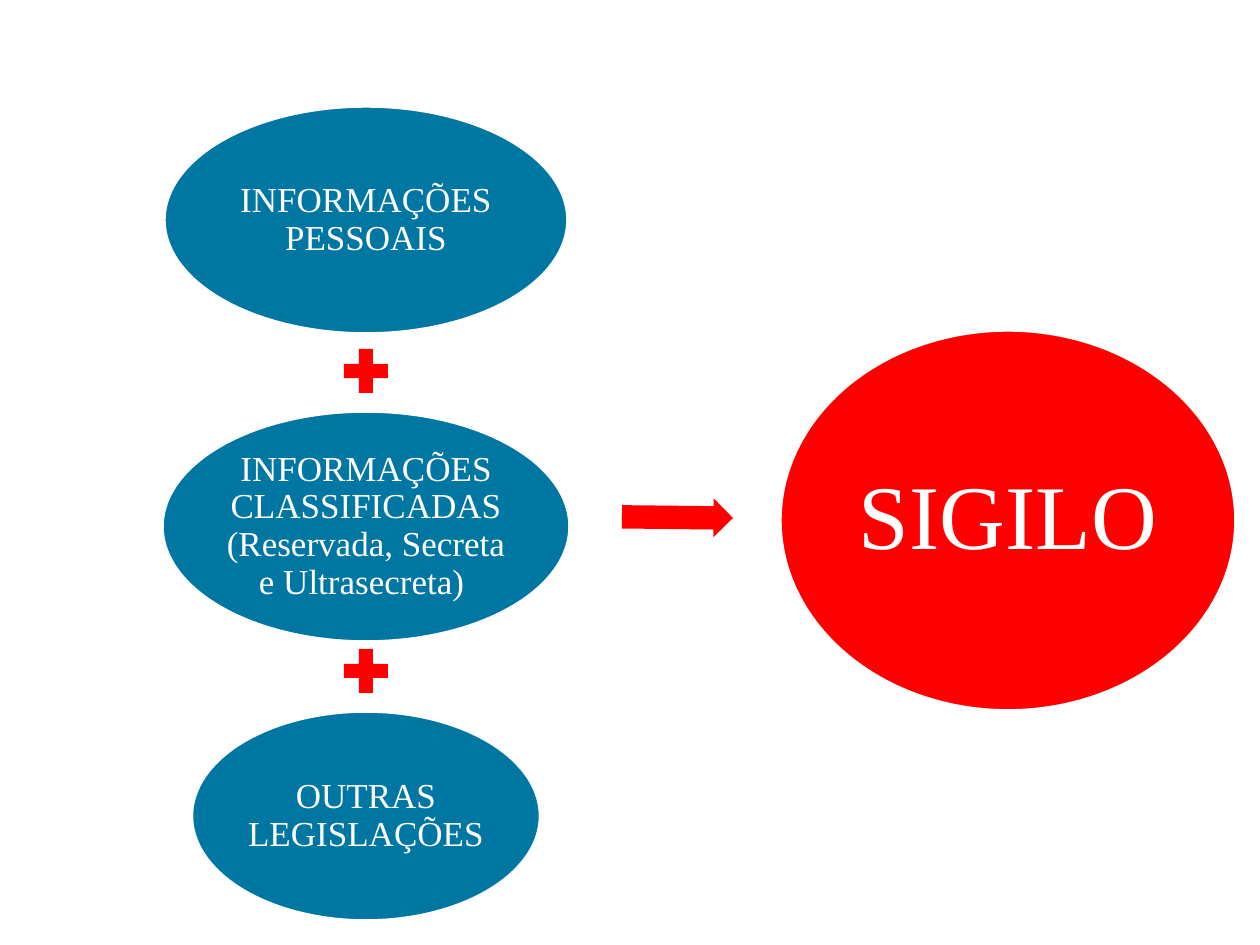
from pptx import Presentation
from pptx.dml.color import RGBColor
from pptx.enum.shapes import MSO_SHAPE
from pptx.enum.text import MSO_ANCHOR, PP_ALIGN
from pptx.util import Emu, Pt

PX = 914400 // 126
OVAL, PLUS, ARROW = MSO_SHAPE.OVAL, MSO_SHAPE.MATH_PLUS, MSO_SHAPE.RIGHT_ARROW
MIDDLE, CENTER = MSO_ANCHOR.MIDDLE, PP_ALIGN.CENTER
FONT = "Times New Roman"
BLUE, RED, WHITE = "0076A3", "FF0000", "FFFFFF"

# top, width, height, wording
SOURCES = [
    (106, 404, 228, "INFORMAÇÕES PESSOAIS"),
    (411, 408, 231, "INFORMAÇÕES CLASSIFICADAS (Reservada, Secreta e Ultrasecreta) "),
    (711, 349, 210, "OUTRAS LEGISLAÇÕES"),
]
PLUS_SIZE = 60
PLUS_GAP = 10


def px(length):
    return Emu(round(length * PX))


def color(hex_code):
    return RGBColor.from_string(hex_code)


def add_solid(slide, kind, box, fill):
    """Add a flat preset shape without outline or shadow."""
    solid = slide.shapes.add_shape(kind, *map(px, box))
    solid.shadow.inherit = False
    solid.fill.solid()
    solid.fill.fore_color.rgb = color(fill)
    solid.line.fill.background()
    return solid


def add_labelled_oval(slide, box, fill, label, size, margin):
    oval = add_solid(slide, OVAL, box, fill)
    oval.line.color.rgb = color(WHITE)
    oval.line.width = Pt(2)
    frame = oval.text_frame
    frame.text = label
    frame.word_wrap = True
    frame.vertical_anchor = MIDDLE
    frame.margin_left = frame.margin_right = px(margin)
    frame.margin_top = frame.margin_bottom = px(margin)
    paragraph = frame.paragraphs[0]
    paragraph.alignment = CENTER
    paragraph.line_spacing = 0.9
    font = paragraph.runs[0].font
    font.name = FONT
    font.size = Pt(size)
    font.color.rgb = color(WHITE)


def add_sum_column(slide, center):
    """Stack the source ovals, with a plus sign above each one but the first."""
    for index, (top, width, height, label) in enumerate(SOURCES):
        if index:
            plus_top = top - PLUS_GAP - PLUS_SIZE
            add_solid(slide, PLUS, (center - PLUS_SIZE / 2, plus_top, PLUS_SIZE, PLUS_SIZE), RED)
        add_labelled_oval(slide, (center - width / 2, top, width, height), BLUE, label, 20, 4)


def add_result(slide, arrow_box, result_box):
    arrow = add_solid(slide, ARROW, arrow_box, RED)
    arrow.adjustments[0] = 0.6
    arrow.adjustments[1] = 0.5
    arrow.rotation = 0.6
    add_labelled_oval(slide, result_box, RED, "SIGILO", 52, 9)


def main():
    deck = Presentation()
    deck.slide_width, deck.slide_height = px(1260), px(945)
    slide = deck.slides.add_slide(deck.slide_layouts[6])
    add_sum_column(slide, 366)
    add_result(slide, (622, 498, 111, 39), (780, 330, 456, 381))
    deck.save("out.pptx")


if __name__ == "__main__":
    main()
